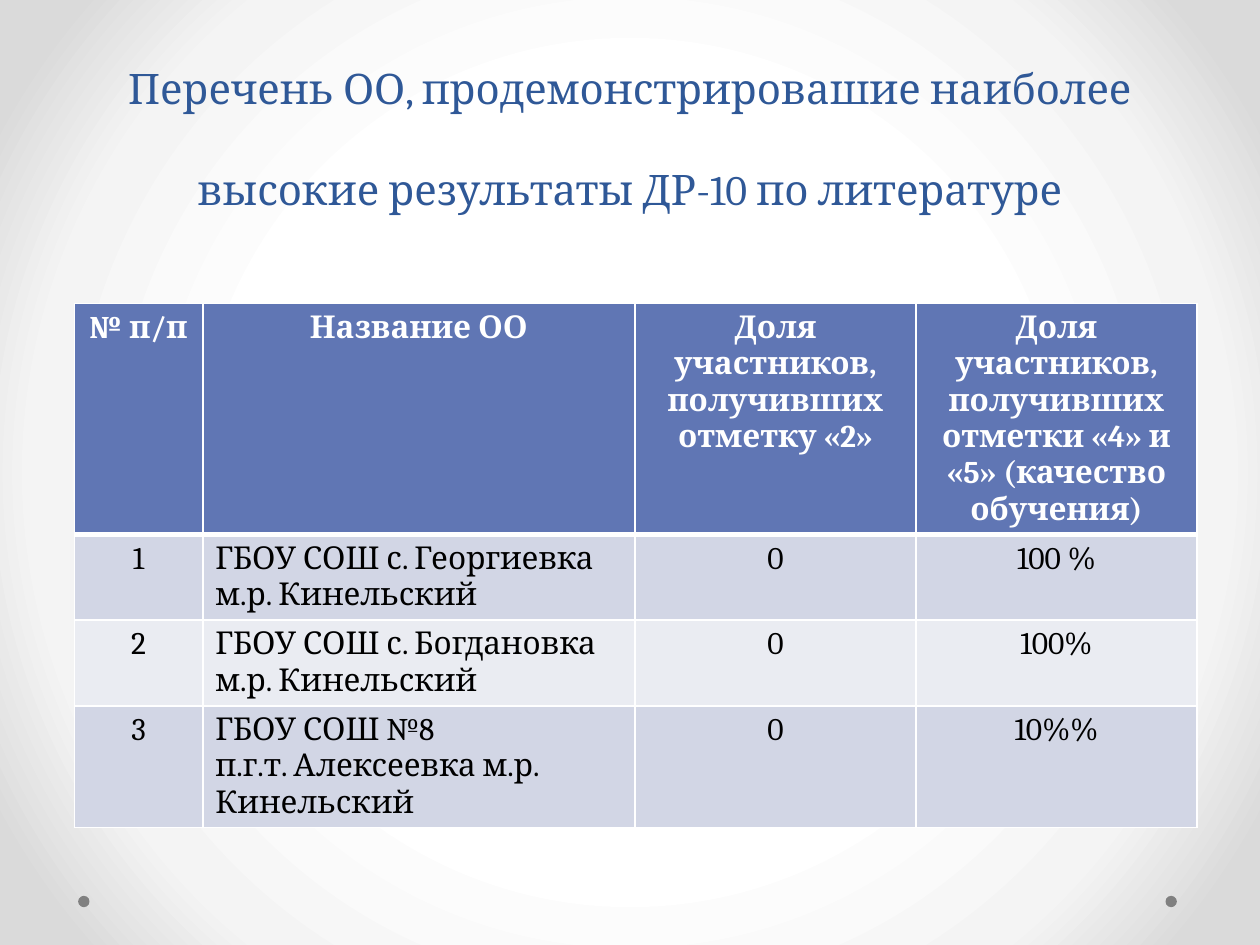
from dataclasses import dataclass
from typing import Any

from lxml.etree import SubElement
from pptx import Presentation
from pptx.dml.color import RGBColor
from pptx.enum.shapes import MSO_SHAPE
from pptx.enum.text import MSO_ANCHOR, MSO_AUTO_SIZE, PP_ALIGN
from pptx.oxml import parse_xml
from pptx.oxml.ns import nsdecls, qn
from pptx.util import Inches, Pt

HEADERS = [
    "№ п/п",
    "Название ОО",
    "Доля участников, получивших отметку «2»",
    "Доля участников, получивших отметки «4» и «5» (качество обучения)",
]
SCHOOLS = [
    ["1", "ГБОУ СОШ с. Георгиевка м.р. Кинельский", "0", "100 %"],
    ["2", "ГБОУ СОШ с. Богдановка м.р. Кинельский", "0", "100%"],
    ["3", "ГБОУ СОШ №8\nп.г.т. Алексеевка м.р. Кинельский", "0", "10%%"],
]
COLUMN_WIDTHS = [1.02, 3.43, 2.23, 2.23]
ROW_HEIGHTS = [1.82, 0.68, 0.68, 0.96]
NAME_COLUMN = 1


def color(value):
    return RGBColor.from_string(value)


@dataclass
class SlideBuilder:
    slide: Any
    font: str = "Cambria"
    title_color: str = "2F5897"
    header_fill: str = "6076B4"
    band_fills: tuple = ("D2D6E5", "EAECF2")
    border: str = "FFFFFF"

    def background(self, stops):
        self.slide.background.fill.solid()
        properties = self.slide.element.find(".//" + qn("p:bgPr"))
        stop_list = "".join(
            f'<a:gs pos="{position * 1000}"><a:srgbClr val="{value}"/></a:gs>'
            for position, value in stops
        )
        gradient = parse_xml(
            f'<a:gradFill {nsdecls("a")} rotWithShape="1"><a:gsLst>{stop_list}</a:gsLst>'
            '<a:path path="circle"><a:fillToRect l="50000" t="50000" r="50000" b="50000"/>'
            "</a:path></a:gradFill>"
        )
        properties.replace(properties.find(qn("a:solidFill")), gradient)

    def dot(self, left, top, size=0.09):
        dot = self.slide.shapes.add_shape(
            MSO_SHAPE.OVAL, Inches(left), Inches(top), Inches(size), Inches(size)
        )
        dot.shadow.inherit = False
        dot.fill.solid()
        dot.fill.fore_color.rgb = color("808080")
        dot.line.fill.background()

    def style(self, para, size, text_color, alignment, bold=False):
        para.alignment = alignment
        para.font.name = self.font
        para.font.size = Pt(size)
        para.font.bold = bold
        para.font.color.rgb = color(text_color)

    def title(self, text, left, top, width, height):
        box = self.slide.shapes.title
        box.left, box.top = Inches(left), Inches(top)
        box.width, box.height = Inches(width), Inches(height)
        frame = box.text_frame
        frame.text = text
        frame.word_wrap = True
        frame.auto_size = MSO_AUTO_SIZE.NONE
        frame.vertical_anchor = MSO_ANCHOR.BOTTOM
        para = frame.paragraphs[0]
        para.line_spacing = Pt(58)
        self.style(para, 24, self.title_color, PP_ALIGN.CENTER)

    def cell_borders(self, cell, widths):
        properties = cell._tc.get_or_add_tcPr()
        for side, width in zip("LRTB", widths):
            line = SubElement(properties, qn(f"a:ln{side}"), w=str(Pt(width)))
            fill = SubElement(line, qn("a:solidFill"))
            SubElement(fill, qn("a:srgbClr"), val=self.border)

    def table(self, rows, left, top, widths, heights):
        table = self.slide.shapes.add_table(
            len(rows), len(widths), Inches(left), Inches(top),
            Inches(sum(widths)), Inches(sum(heights)),
        ).table
        for column, width in zip(table.columns, widths):
            column.width = Inches(width)
        for row, height in zip(table.rows, heights):
            row.height = Inches(height)
        for row_index, texts in enumerate(rows):
            for column_index, text in enumerate(texts):
                self.cell(table.cell(row_index, column_index), text, row_index, column_index)

    def cell(self, cell, text, row_index, column_index):
        header = row_index == 0
        top_width = 3 if row_index == 1 else 1
        self.cell_borders(cell, (1, 1, top_width, 3 if header else 1))
        cell.fill.solid()
        fill = self.header_fill if header else self.band_fills[(row_index - 1) % 2]
        cell.fill.fore_color.rgb = color(fill)
        cell.text = text
        is_name = column_index == NAME_COLUMN and not header
        alignment = PP_ALIGN.LEFT if is_name else PP_ALIGN.CENTER
        for para in cell.text_frame.paragraphs:
            self.style(para, 18, "FFFFFF" if header else "000000", alignment, header)


def main():
    deck = Presentation()
    deck.slide_width, deck.slide_height = Inches(10), Inches(7.5)
    page = SlideBuilder(deck.slides.add_slide(deck.slide_layouts[5]))
    page.background([(50, "FFFFFF"), (76, "F4F4F4"), (92, "DADADA")])
    for left in (9.25, 0.62):
        page.dot(left, 7.11)
    page.title(
        "Перечень ОО, продемонстрировашие наиболее высокие результаты ДР-10 по литературе",
        0.5, 0, 9, 1.75,
    )
    page.table([HEADERS, *SCHOOLS], 0.59, 2.41, COLUMN_WIDTHS, ROW_HEIGHTS)
    deck.save("out.pptx")


if __name__ == "__main__":
    main()
